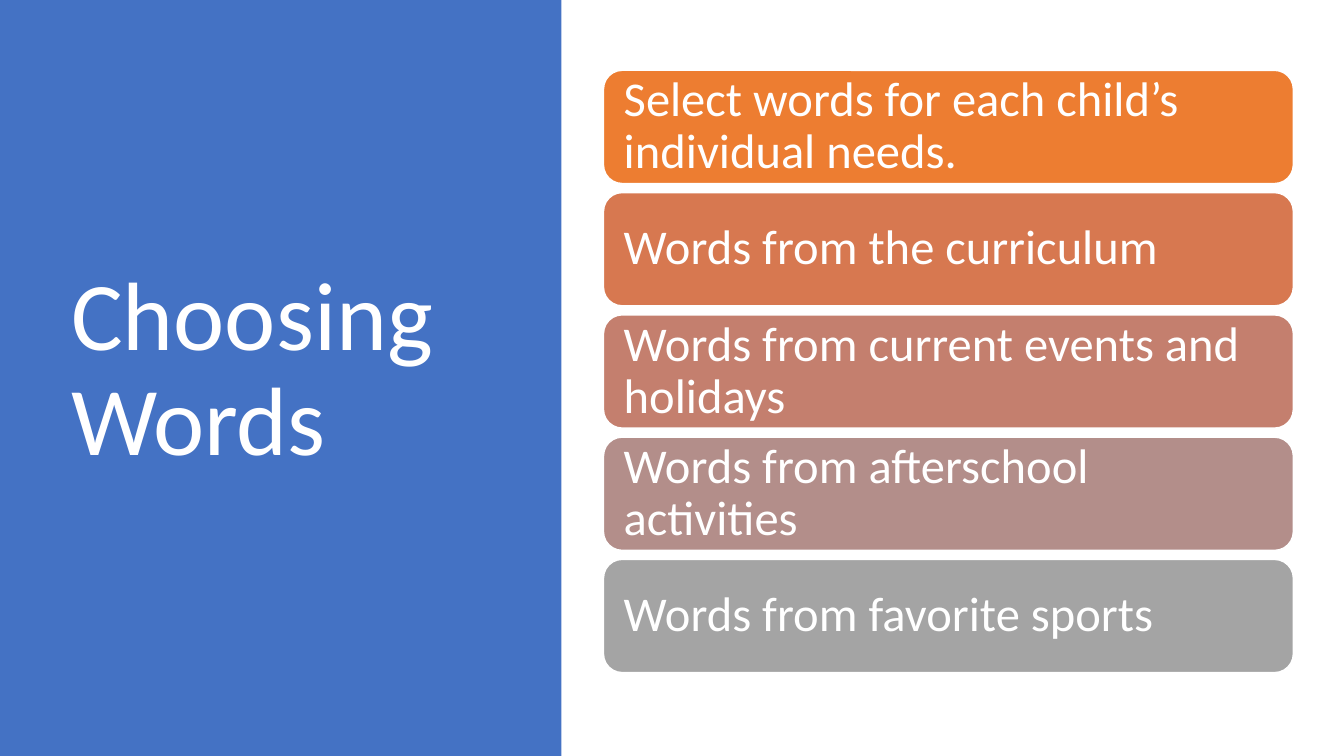
"""Build the Choosing Words slide with a title panel and a stack of cards."""
from dataclasses import dataclass

from pptx import Presentation
from pptx.dml.color import RGBColor
from pptx.enum.shapes import MSO_SHAPE
from pptx.enum.text import MSO_ANCHOR, PP_ALIGN
from pptx.util import Pt

RECT = MSO_SHAPE.RECTANGLE
ROUNDED = MSO_SHAPE.ROUNDED_RECTANGLE
MIDDLE = MSO_ANCHOR.MIDDLE
LEFT = PP_ALIGN.LEFT


@dataclass(frozen=True)
class Theme:
    font: str = "Calibri"
    title_size: float = 52
    card_size: float = 26
    panel: str = "4472C4"
    white: str = "FFFFFF"
    cards: tuple = ("ED7D31", "D77850", "C47F6E", "B38E8A", "A4A4A4")


class SlideBuilder:
    def __init__(self, slide, theme):
        self.s = slide
        self.theme = theme

    def color(self, value):
        return RGBColor.from_string(value)

    def set_text(self, sp, text, size, inset_x, inset_y):
        tf = sp.text_frame
        tf.word_wrap = True
        tf.vertical_anchor = MIDDLE
        tf.margin_left = tf.margin_right = Pt(inset_x)
        tf.margin_top = tf.margin_bottom = Pt(inset_y)
        p = tf.paragraphs[0]
        p.alignment = LEFT
        p.line_spacing = 0.9
        r = p.add_run()
        r.text = text
        r.font.name = self.theme.font
        r.font.size = Pt(size)
        r.font.color.rgb = self.color(self.theme.white)

    def block(self, kind, box, fill):
        sp = self.s.shapes.add_shape(kind, *map(Pt, box))
        sp.shadow.inherit = False
        sp.fill.solid()
        sp.fill.fore_color.rgb = self.color(fill)
        sp.line.fill.background()
        return sp

    def title(self, box, text):
        sp = self.s.shapes.add_textbox(*map(Pt, box))
        self.set_text(sp, text, self.theme.title_size, 7.2, 3.6)

    def card(self, box, text, fill):
        sp = self.block(ROUNDED, box, fill)
        sp.adjustments[0] = 0.167
        sp.line.color.rgb = self.color(self.theme.white)
        sp.line.width = Pt(1)
        self.set_text(sp, text, self.theme.card_size, 8, 8)


def main():
    theme = Theme()
    prs = Presentation()
    prs.slide_width, prs.slide_height = Pt(720), Pt(405)
    builder = SlideBuilder(prs.slides.add_slide(prs.slide_layouts[6]), theme)

    builder.block(RECT, (0, 0, 300.8, 405), theme.panel)
    builder.title((31, 36.7, 224.6, 324.7), "Choosing Words")

    sources = (
        "Select words for each child’s individual needs.",
        "Words from the curriculum",
        "Words from current events and holidays",
        "Words from afterschool activities",
        "Words from favorite sports",
    )
    top, height, gap = 37.6, 60.9, 4.6
    for i, (text, fill) in enumerate(zip(sources, theme.cards)):
        builder.card((323.2, top + i * (height + gap), 369.8, height), text, fill)

    prs.save("out.pptx")


if __name__ == "__main__":
    main()
